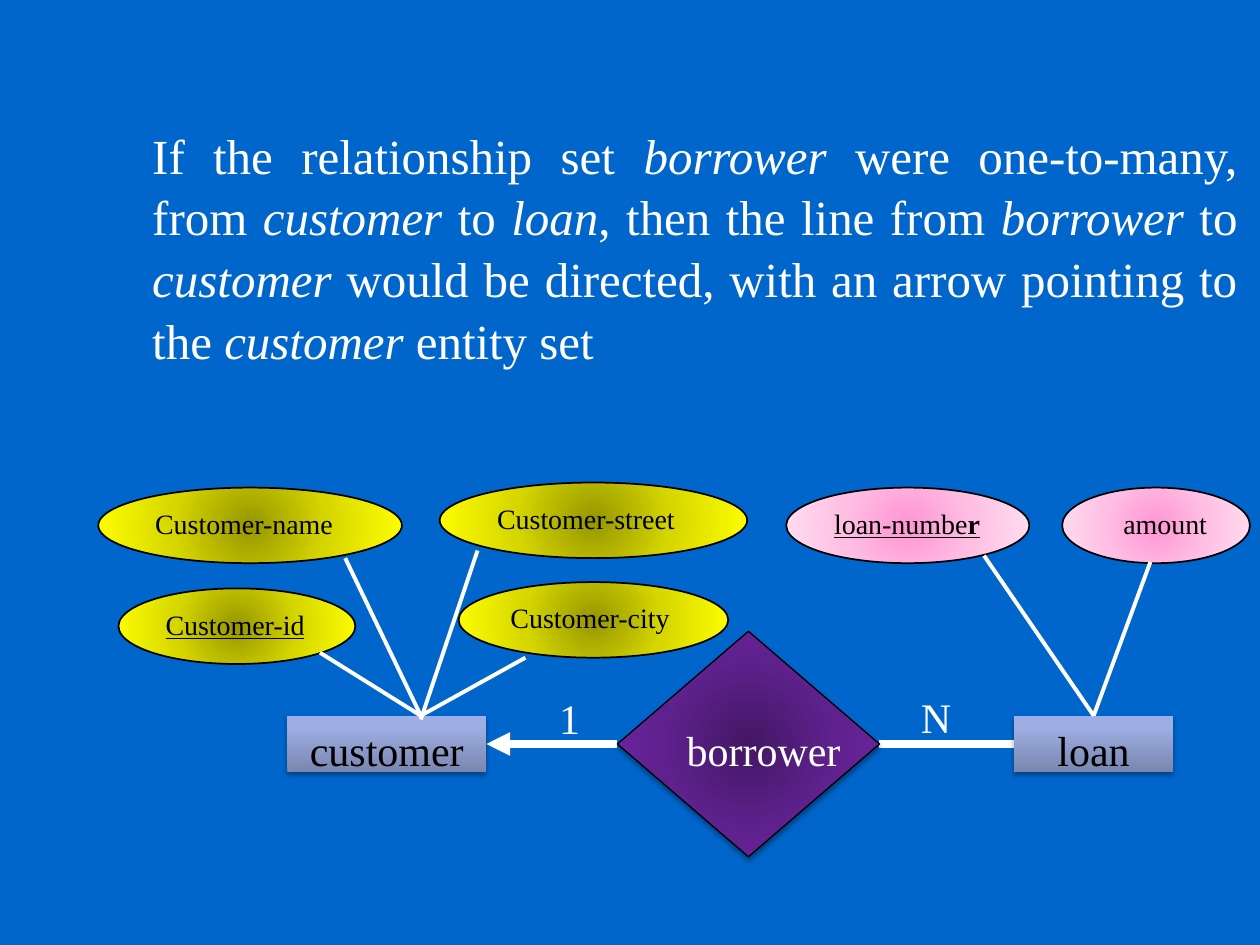
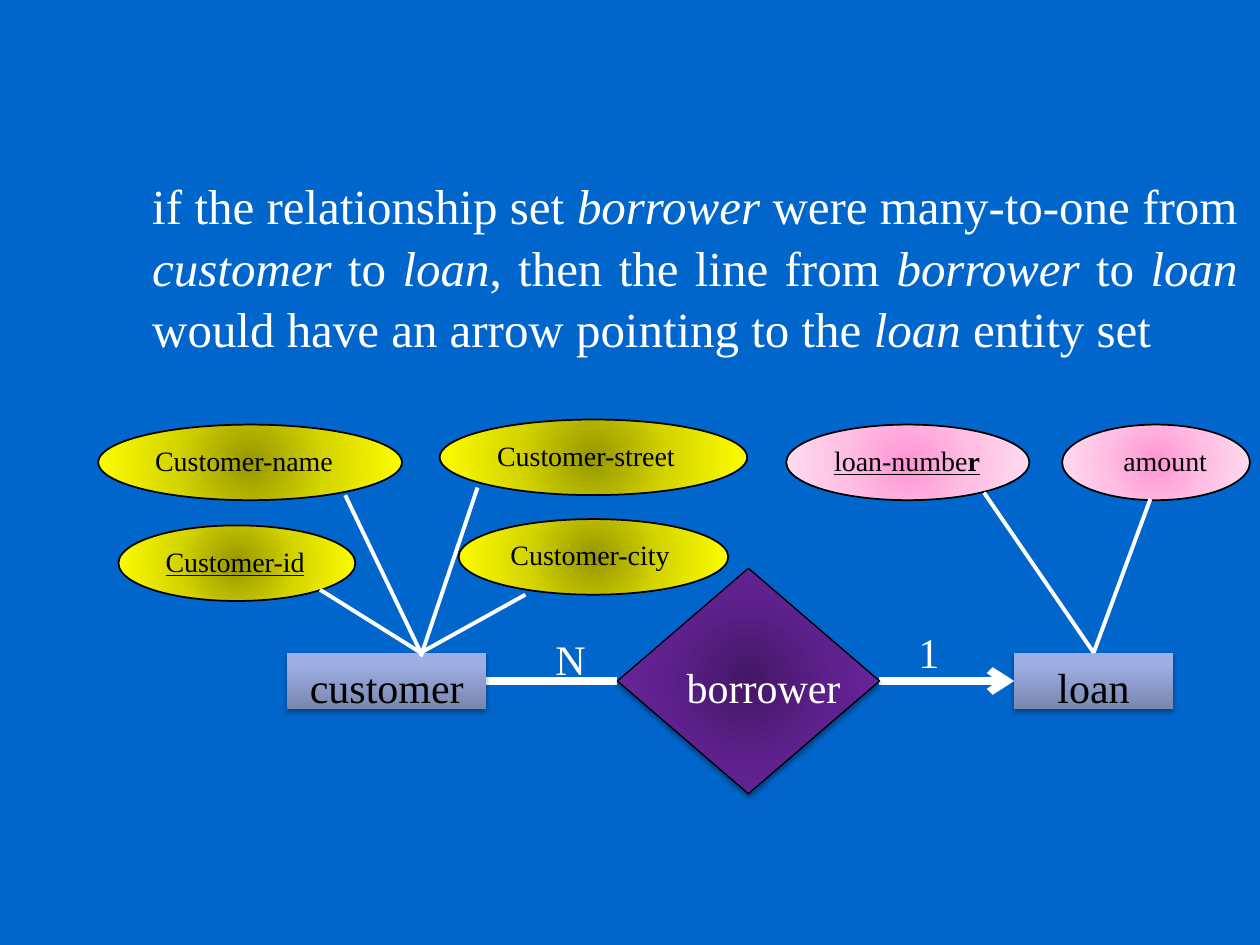
"""Build two entity-relationship slides on borrower cardinality."""
from itertools import cycle

from lxml.etree import SubElement
from pptx import Presentation
from pptx.dml.color import RGBColor
from pptx.enum.shapes import MSO_CONNECTOR, MSO_SHAPE
from pptx.enum.text import MSO_ANCHOR, MSO_AUTO_SIZE, PP_ALIGN
from pptx.oxml import parse_xml
from pptx.oxml.ns import nsdecls, qn
from pptx.util import Inches, Pt

BLUE = RGBColor(0x00, 0x66, 0xCC)
WHITE = RGBColor(0xFF, 0xFF, 0xFF)
BLACK = RGBColor(0x00, 0x00, 0x00)
FONT = "Times New Roman"

RADIAL = ('<a:path path="circle"><a:fillToRect l="50000" t="50000" '
          'r="50000" b="50000"/></a:path>')
UPWARD = '<a:lin ang="16200000" scaled="0"/>'
YELLOW_GLOW = ({0: RGBColor(0x97, 0x97, 0x00), 50: RGBColor(0xD7, 0xD7, 0x00),
                100: RGBColor(0xFF, 0xFF, 0x00)}, RADIAL)
PINK_GLOW = ({0: RGBColor(0xFF, 0x95, 0xD4), 50: RGBColor(0xFF, 0xBE, 0xE3),
              100: RGBColor(0xFF, 0xDF, 0xF1)}, RADIAL)
PURPLE_GLOW = ({0: RGBColor(0x43, 0x17, 0x64), 50: RGBColor(0x5F, 0x21, 0x8E),
                100: RGBColor(0x71, 0x28, 0xA8)}, RADIAL)
STEEL_FADE = ({0: RGBColor(0x79, 0x86, 0xAF), 80: RGBColor(0x9D, 0xAE, 0xE3),
               100: RGBColor(0x9C, 0xAE, 0xE6)}, UPWARD)

presentation = Presentation()
presentation.slide_width = Inches(10)
presentation.slide_height = Inches(7.5)
COLUMN = presentation.slide_width / 100
ROW = presentation.slide_height / 75
background = presentation.slide_master.background.fill
background.solid()
background.fore_color.rgb = BLUE

BOX_TOP, BOX_HEIGHT = 18.5, 4.5
AXIS = BOX_TOP + BOX_HEIGHT / 2
ATTRIBUTE_HEIGHT = 6

ATTRIBUTES = [
    ([("Customer-id", "u")], 9.4, 8.4, 18.8, YELLOW_GLOW, 0),
    ([("Customer-name", "")], 7.8, 0.4, 24.1, YELLOW_GLOW, 0),
    ([("Customer-street", "")], 34.9, 0, 24.4, YELLOW_GLOW, 0),
    ([("Customer-city", "")], 36.4, 7.9, 21.4, YELLOW_GLOW, 0),
    ([("amount", "")], 84.3, 0.4, 14.9, PINK_GLOW, 1.67),
    ([("loan-numbe", "u"), ("r", "ub")], 62.4, 0.4, 19.3, PINK_GLOW, 0),
]
ENTITIES = [("customer", 22.8, 15.8), ("loan", 80.5, 12.6)]
ATTRIBUTE_LINES = [
    ((37.9, 5.4), (33.4, 18.8)),
    ((27.4, 6), (33.4, BOX_TOP)),
    ((41.7, 13.9), (33.4, BOX_TOP)),
    ((25.4, 13.5), (33.4, BOX_TOP)),
    ((91.3, 6.3), (86.8, BOX_TOP)),
    ((78.1, 5.8), (86.8, BOX_TOP)),
]
NODES = [(MSO_SHAPE.DIAMOND, [], 49, 11.8, 20.8, 17.9, PURPLE_GLOW, 0.75, 0)]
for name, left, width in ENTITIES:
    NODES.append((MSO_SHAPE.RECTANGLE, [(name, "")], left, BOX_TOP, width,
                  BOX_HEIGHT, STEEL_FADE, 0, 0))
for runs, left, top, width, glow, indent in ATTRIBUTES:
    NODES.append((MSO_SHAPE.OVAL, runs, left, top, width,
                  ATTRIBUTE_HEIGHT, glow, 1, indent))

SLIDES = [
    {
        "sentence": ["If the relationship set ", "borrower ",
                     "were one-to-many, from ", "customer ", "to", " loan",
                     ", then the line from ", "borrower ", "to ", "customer ",
                     "would be directed, with an arrow pointing to the ",
                     "customer ", "entity set"],
        "sentence_top": 9.2, "sentence_height": 19.9, "diagram_top": 38.3,
        "arrows": ("triangle", None),
        "labels": [("1", 43.4, 16), ("N", 72.1, 15.9)],
    },
    {
        "sentence": ["if the relationship set ", "borrower ",
                     "were many-to-one from ", "customer ", "to ", "loan",
                     ", then the line from ", "borrower ", "to ", "loan ",
                     "would have an arrow pointing to the ", "loan ",
                     "entity set"],
        "sentence_top": 13.2, "sentence_height": 15.1, "diagram_top": 33.3,
        "arrows": (None, "arrow"),
        "labels": [("N", 43.1, 16.3), ("1", 71.9, 15.7)],
    },
]


def write(shape, runs, size, color, alignment):
    """Fill a shape with styled runs; i, u and b switch styles on."""
    frame = shape.text_frame
    frame.word_wrap = True
    frame.vertical_anchor = MSO_ANCHOR.TOP
    paragraph = frame.paragraphs[0]
    paragraph.alignment = alignment
    paragraph.line_spacing = 1.05
    for text, style in runs:
        run = paragraph.add_run()
        run.text = text
        run.font.name = FONT
        run.font.size = Pt(size)
        run.font.color.rgb = color
        run.font.italic = "i" in style
        run.font.underline = "u" in style
        run.font.bold = "b" in style


def draw_line(shapes, start, end, diagram_top, width, arrow=None):
    """Draw a white line in diagram units, with an optional arrowhead."""
    connector = shapes.add_connector(
        MSO_CONNECTOR.STRAIGHT,
        int(start[0] * COLUMN), int((diagram_top + start[1]) * ROW),
        int(end[0] * COLUMN), int((diagram_top + end[1]) * ROW))
    connector.line.color.rgb = WHITE
    connector.line.width = Pt(width)
    properties = connector.element.spPr
    if arrow:
        SubElement(properties.find(qn("a:ln")), qn("a:tailEnd"), type=arrow)
    SubElement(properties, qn("a:effectLst"))


for content in SLIDES:
    slide = presentation.slides.add_slide(presentation.slide_layouts[6])
    diagram_top = content["diagram_top"]
    diagram = slide.shapes.add_group_shape().shapes

    relationship_lines = [((49, AXIS), (38.6, AXIS)), ((69.8, AXIS), (80.5, AXIS))]
    for (start, end), arrow in zip(relationship_lines, content["arrows"]):
        draw_line(diagram, start, end, diagram_top, 4.5, arrow)

    for geometry, runs, left, top, width, height, gradient, outline, indent in NODES:
        node = diagram.add_shape(
            geometry, int(left * COLUMN), int((diagram_top + top) * ROW),
            int(width * COLUMN), int(height * ROW))
        stops, direction = gradient
        stop_list = "".join(
            f'<a:gs pos="{position * 1000}"><a:srgbClr val="{color}"/></a:gs>'
            for position, color in stops.items())
        node.fill.gradient()
        properties = node.element.spPr
        properties.replace(properties.find(qn("a:gradFill")), parse_xml(
            f'<a:gradFill {nsdecls("a")} rotWithShape="1">'
            f'<a:gsLst>{stop_list}</a:gsLst>{direction}</a:gradFill>'))
        if outline:
            node.line.color.rgb = BLACK
            node.line.width = Pt(outline)
        else:
            node.line.fill.background()
        node.shadow.inherit = False
        if geometry == MSO_SHAPE.OVAL:
            node.text_frame.margin_left = int((1 + indent) * COLUMN)
            node.text_frame.margin_right = 0
            write(node, runs, 16, BLACK, PP_ALIGN.LEFT)
        else:
            properties.find(qn("a:effectLst")).append(parse_xml(
                f'<a:outerShdw {nsdecls("a")} blurRad="40000" dist="23000" '
                'dir="5400000" rotWithShape="0"><a:srgbClr val="000000">'
                '<a:alpha val="35000"/></a:srgbClr></a:outerShdw>'))
            write(node, runs, 24, BLACK, PP_ALIGN.CENTER)

    for start, end in ATTRIBUTE_LINES:
        draw_line(diagram, start, end, diagram_top, 2.25)

    sentence = list(zip(content["sentence"], cycle(("", "i"))))
    captions = [
        (sentence, 11.1, content["sentence_top"], 88.1,
         content["sentence_height"], 28, PP_ALIGN.JUSTIFY),
        ([("borrower", "")], 53.5, diagram_top + BOX_TOP, 20.8, BOX_HEIGHT,
         24, PP_ALIGN.LEFT),
    ]
    for label, left, top in content["labels"]:
        captions.append(([(label, "")], left, diagram_top + top, 4.6, 5,
                         24, PP_ALIGN.LEFT))
    for runs, left, top, width, height, size, alignment in captions:
        caption = slide.shapes.add_textbox(
            int(left * COLUMN), int(top * ROW),
            int(width * COLUMN), int(height * ROW))
        write(caption, runs, size, WHITE, alignment)
        caption.text_frame.auto_size = MSO_AUTO_SIZE.SHAPE_TO_FIT_TEXT

presentation.save("out.pptx")
